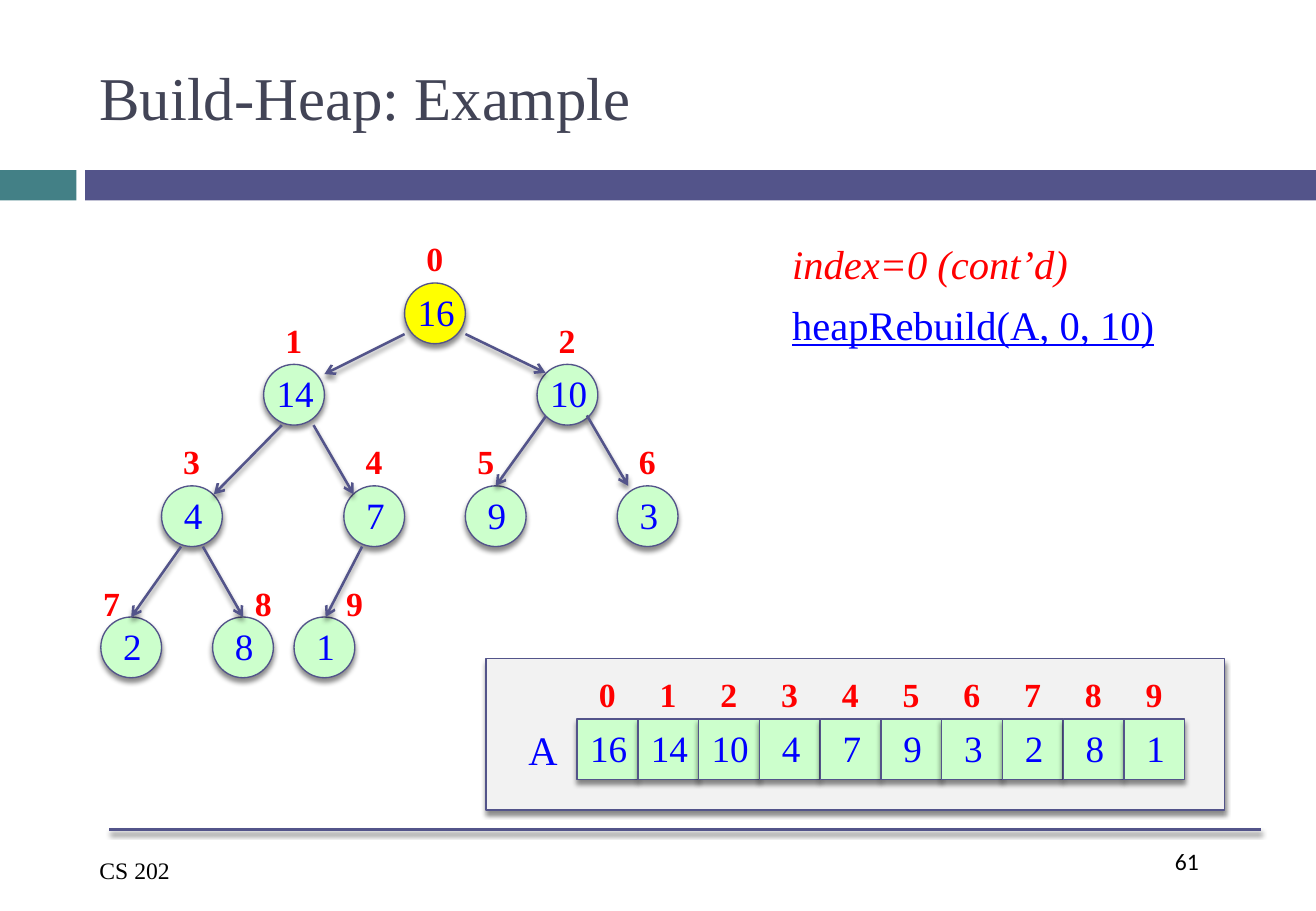
from lxml import etree
from pptx import Presentation
from pptx.dml.color import RGBColor
from pptx.enum import shapes as s, text as t
from pptx.oxml import ns
from pptx.util import Inches, Pt

SERIF = "Times New Roman"
RED, BLUE, MINT, GOLD = "FF0000", "0000FF", "CCFFCC", "FFFF00"
NAVY, TEAL, GRAY, SLATE = "53548A", "438086", "F2F2F2", "424456"
SIDE = 0.5
HEAP = [16, 14, 10, 4, 7, 9, 3, 2, 8, 1]
NODES = [(2.5, 0), (1.34, 0.67), (3.59, 0.67), (0.5, 1.67), (2, 1.67),
         (3, 1.67), (4.25, 1.67), (0, 2.75), (0.92, 2.75), (1.59, 2.75)]
TAGS = [(0.08, -0.42)] * 5 + [(0, -0.42), (0.08, -0.42),
                            (-0.08, -0.33), (0.25, -0.33), (0.33, -0.33)]
EDGES = [((0, 0.42), (0.5, 0.08)), ((0.5, 0.42), (0.07, 0.07)),
         ((0.15, 0.5), (0.43, 0.07)), ((0.41, 0.5), (0.08, 0.07)),
         ((0.07, 0.43), (0.25, 0)), ((0.41, 0.42), (0.09, 0)),
         ((0.16, 0.5), (0.25, 0)), ((0.34, 0.5), (0.25, 0)),
         ((0.15, 0.5), (0.26, 0))]


def paint(code):
    """Turn a hex string into a colour."""
    return RGBColor.from_string(code)


def shade(item):
    """Give a shape or line a soft shadow straight below it."""
    prop = item._element.spPr
    effect = etree.SubElement(prop, ns.qn("a:effectLst"))
    outer = etree.SubElement(effect, ns.qn("a:outerShdw"), blurRad=str(Pt(3)),
                             dist=str(Pt(2.4)), dir="5400000", rotWithShape="0")
    tint = etree.SubElement(outer, ns.qn("a:srgbClr"), val="000000")
    etree.SubElement(tint, ns.qn("a:alpha"), val="45000")


def style(frame, size, color, font=SERIF, **flags):
    """Format every run in a text frame."""
    for para in frame.paragraphs:
        for run in para.runs:
            run.font.size, run.font.name = Pt(size), font
            run.font.color.rgb = paint(color)
            for name, value in flags.items():
                setattr(run.font, name, value)


def label(slide, words, box, size, color, wrap=False, **flags):
    """Place a left-aligned text box."""
    item = slide.shapes.add_textbox(*map(Inches, box))
    item.text_frame.text = words
    item.text_frame.word_wrap = wrap
    style(item.text_frame, size, color, **flags)
    return item


def block(slide, kind, box, fill, edge=True):
    """Place a filled shape, with outline and shadow if it has an edge."""
    item = slide.shapes.add_shape(kind, *map(Inches, box))
    item.fill.solid()
    item.fill.fore_color.rgb = paint(fill)
    if edge:
        item.line.color.rgb = paint(NAVY)
        item.line.width = Pt(0.79)
        shade(item)
    else:
        item.line.fill.background()
        item.shadow.inherit = False
    return item


def cell(slide, kind, left, top, value, fill=MINT):
    """Place one heap element with its value."""
    item = block(slide, kind, (left, top, SIDE, SIDE), fill)
    frame = item.text_frame
    frame.text = str(value)
    frame.word_wrap = False
    frame.margin_left = Inches(0.02)
    frame.margin_right = frame.margin_top = 0
    frame.margin_bottom = Inches(0.03)
    frame.vertical_anchor = t.MSO_ANCHOR.MIDDLE
    frame.paragraphs[0].alignment = t.PP_ALIGN.CENTER
    style(frame, 22, BLUE)


def index(slide, left, top, number):
    """Place a red index number."""
    label(slide, str(number), (left, top, 0.34, 0.44), 20, RED, bold=True)


def stroke(slide, start, end, arrow=False):
    """Draw a shadowed line, with an arrowhead at its end on request."""
    line = slide.shapes.add_connector(
        s.MSO_CONNECTOR.STRAIGHT, *map(Inches, (*start, *end)))
    line.line.color.rgb = paint(NAVY)
    line.line.width = Pt(1.5)
    if arrow:
        etree.SubElement(line.line._get_or_add_ln(), ns.qn("a:tailEnd"), type="arrow")
    shade(line)


def header(slide, left, top, width, height):
    """Draw the title above its two-colour band."""
    title = label(slide, "Build-Heap: Example", (left + 0.72, top + 0.25, 9.66, 1.08),
                  36, SLATE, wrap=True)
    title.text_frame.vertical_anchor = t.MSO_ANCHOR.MIDDLE
    band = top + height - 0.25
    for start, end, fill in ((0, 0.63, TEAL), (0.7, width, NAVY)):
        block(slide, s.MSO_SHAPE.RECTANGLE, (left + start, band, end - start, 0.25),
              fill, edge=False)


def footer(slide, left, top, width):
    """Draw the rule, course name and page number."""
    stroke(slide, (left + 0.18, top), (left + width, top))
    label(slide, "CS 202", (left, top + 0.17, 1.99, 0.34), 14, "000000")
    label(slide, "61", (left + width - 0.81, top + 0.09, 0.81, 0.5), 14, "000000",
          font="Calibri")


def tree(slide, left, top):
    """Draw the heap as a binary tree."""
    spots = [(left + x, top + y) for x, y in NODES]
    for i, (x, y) in enumerate(spots):
        cell(slide, s.MSO_SHAPE.OVAL, x, y, HEAP[i], MINT if i else GOLD)
    for child, (out, into) in enumerate(EDGES, 1):
        (px, py), (cx, cy) = spots[(child - 1) // 2], spots[child]
        stroke(slide, (px + out[0], py + out[1]), (cx + into[0], cy + into[1]), True)
    for i, ((x, y), (dx, dy)) in enumerate(zip(spots, TAGS)):
        index(slide, x + dx, y + dy, i)


def array(slide, left, top, width, height):
    """Draw the heap as an indexed array in a panel."""
    block(slide, s.MSO_SHAPE.RECTANGLE, (left, top, width, height), GRAY)
    label(slide, "A", (left + 0.25, top + 0.5, 0.45, 0.5), 24, BLUE)
    for i, value in enumerate(HEAP):
        x = left + 0.75 + i * SIDE
        cell(slide, s.MSO_SHAPE.RECTANGLE, x, top + 0.5, value)
        index(slide, x + 0.08, top + 0.08, i)


def step(slide, left, top):
    """Write the current step and its call."""
    label(slide, "index=0 (cont’d)", (left, top, 2.49, 0.5), 24, RED, italic=True)
    label(slide, "heapRebuild(A, 0, 10)", (left, top + 0.5, 3.21, 0.5), 24, BLUE,
          underline=True)


def main():
    """Build and save the slide."""
    deck = Presentation()
    deck.slide_width, deck.slide_height = Inches(10.83), Inches(7.5)
    slide = deck.slides.add_slide(deck.slide_layouts[6])
    header(slide, 0, 0, 10.83, 1.65)
    footer(slide, 0.72, 6.83, 9.66)
    array(slide, 4, 5.42, 6.08, 1.25)
    tree(slide, 0.83, 2.33)
    step(slide, 6.42, 1.92)
    deck.save("out.pptx")


if __name__ == "__main__":
    main()
